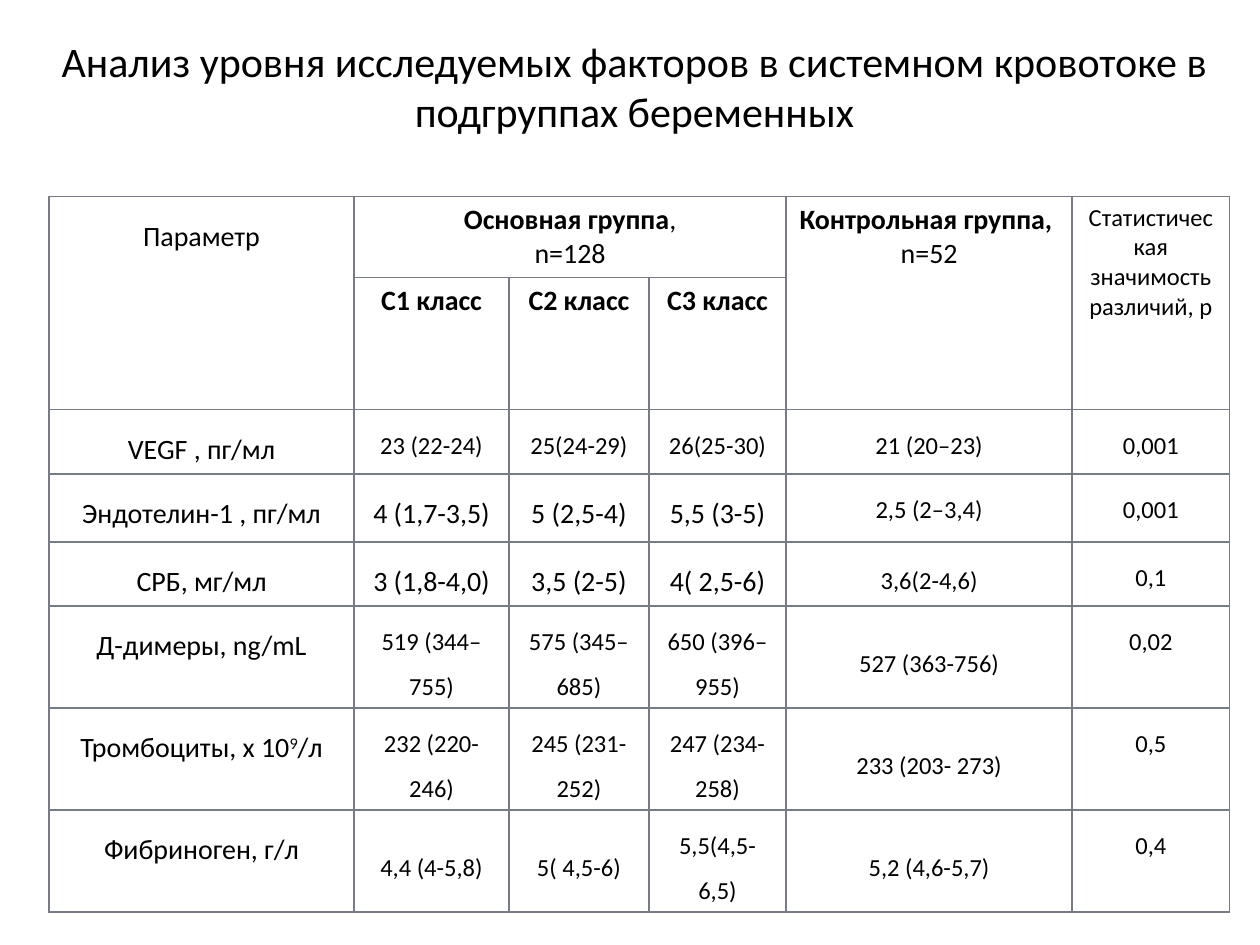
"""Build a slide with a table of blood factor levels in subgroups of pregnant women."""
from dataclasses import dataclass

from lxml import etree
from pptx import Presentation
from pptx.dml.color import RGBColor
from pptx.enum.text import MSO_ANCHOR, MSO_AUTO_SIZE, PP_ALIGN
from pptx.oxml.ns import qn
from pptx.util import Inches, Pt

CENTER = PP_ALIGN.CENTER
TOP, MIDDLE = MSO_ANCHOR.TOP, MSO_ANCHOR.MIDDLE
GROW = MSO_AUTO_SIZE.SHAPE_TO_FIT_TEXT


@dataclass(frozen=True)
class Theme:
    font: str = "Calibri"
    ink: RGBColor = RGBColor(0, 0, 0)
    border: str = "777C84"
    title: int = 24
    body: int = 16
    small: int = 14


theme = Theme()


def write(para, text, size=theme.body, bold=False, raised=False, line=None, after=None):
    para.alignment = CENTER
    if line:
        para.line_spacing = line
    if after is not None:
        para.space_after = Pt(after)
    for number, part in enumerate(text.split("\n")):
        if number:
            para.add_line_break()
            etree.SubElement(para._p[-1], qn("a:rPr"), sz=str(size * 100))
        if not part:
            continue
        span = para.add_run()
        span.text = part
        span.font.name = theme.font
        span.font.size = Pt(size)
        span.font.bold = bold
        span.font.color.rgb = theme.ink
        if raised:
            span.font._element.set("baseline", "30000")


def draw_borders(cell):
    properties = cell._tc.get_or_add_tcPr()
    for position, side in enumerate(("lnL", "lnR", "lnT", "lnB")):
        edge = etree.Element(qn(f"a:{side}"), w=str(Pt(1)))
        fill = etree.SubElement(edge, qn("a:solidFill"))
        etree.SubElement(fill, qn("a:srgbClr"), val=theme.border)
        properties.insert(position, edge)


deck = Presentation()
deck.slide_width, deck.slide_height = Inches(10), Inches(7.5)
page = deck.slides.add_slide(deck.slide_layouts[6])

widths = [2.42, 1.23, 1.11, 1.09, 2.27, 1.25]
heights = [0.47, 0.35, 0.51, 0.54] + [0.46] * 4
records = [
    ("VEGF , пг/мл", "23 (22-24)", "25(24-29)", "26(25-30)", "21 (20–23)", "0,001"),
    ("Эндотелин-1 , пг/мл", "4 (1,7-3,5)", "5 (2,5-4)", "5,5 (3-5)", "2,5 (2–3,4)", "0,001"),
    ("СРБ, мг/мл", "3 (1,8-4,0)", "3,5 (2-5)", "4( 2,5-6)", "3,6(2-4,6)", "0,1"),
    ("Д-димеры, ng/mL", "519 (344–755)", "575 (345–685)", "650 (396–955)", "527 (363-756)", "0,02"),
    ("Тромбоциты, х 10^9^/л", "232 (220-246)", "245 (231-252)", "247 (234-258)", "233 (203- 273)", "0,5"),
    ("Фибриноген, г/л", "4,4 (4-5,8)", "5( 4,5-6)", "5,5(4,5-6,5)", "5,2 (4,6-5,7)", "0,4"),
]
large_rows = (3, 4)
first_middle_row = 4

frame = page.shapes.add_table(len(heights), len(widths), Inches(0.39), Inches(1.56),
                              Inches(9.38), Inches(4.88))
table = frame.table
table.first_row = table.horz_banding = False
for column, width in zip(table.columns, widths):
    column.width = Inches(width)
for row, height in zip(table.rows, heights):
    row.height = Inches(height)
frame.height = Inches(4.88)

for cell in table.iter_cells():
    cell.fill.background()
    draw_borders(cell)

table.cell(0, 1).merge(table.cell(0, 3))
for column in (0, 4, 5):
    table.cell(0, column).merge(table.cell(1, column))

headings = [
    (0, 0, [("Параметр", False)], dict(line=1.5, after=6)),
    (0, 1, [("Основная группа", True), (",\nn=128", False)], dict(after=6)),
    (0, 4, [("Контрольная группа, \n", True), ("n=52", False)], dict(after=6)),
    (0, 5, [("Статистическая значимость различий, р", False)], dict(size=theme.small)),
]
headings += [(1, number, [(f"С{number} класс", True)], dict(after=6)) for number in (1, 2, 3)]
for row, column, pieces, style in headings:
    para = table.cell(row, column).text_frame.paragraphs[0]
    for text, bold in pieces:
        write(para, text, bold=bold, **style)

for row, record in enumerate(records, start=2):
    for column, text in enumerate(record):
        cell = table.cell(row, column)
        is_class = column in (1, 2, 3)
        is_large = column == 0 or (is_class and row in large_rows)
        is_middle = row >= first_middle_row and 1 <= column <= 4
        cell.vertical_anchor = MIDDLE if is_middle else TOP
        para = cell.text_frame.paragraphs[0]
        for number, piece in enumerate(text.split("^")):
            write(para, piece, size=theme.body if is_large else theme.small,
                  raised=number == 1, line=1.5, after=0 if is_class else 6)

box = page.shapes.add_textbox(Inches(0.23), Inches(0.23), Inches(9.61), Inches(0.91))
box.text_frame.word_wrap = True
box.text_frame.auto_size = GROW
write(box.text_frame.paragraphs[0],
      "Анализ уровня исследуемых факторов в системном кровотоке в подгруппах беременных",
      size=theme.title)

deck.save("out.pptx")
